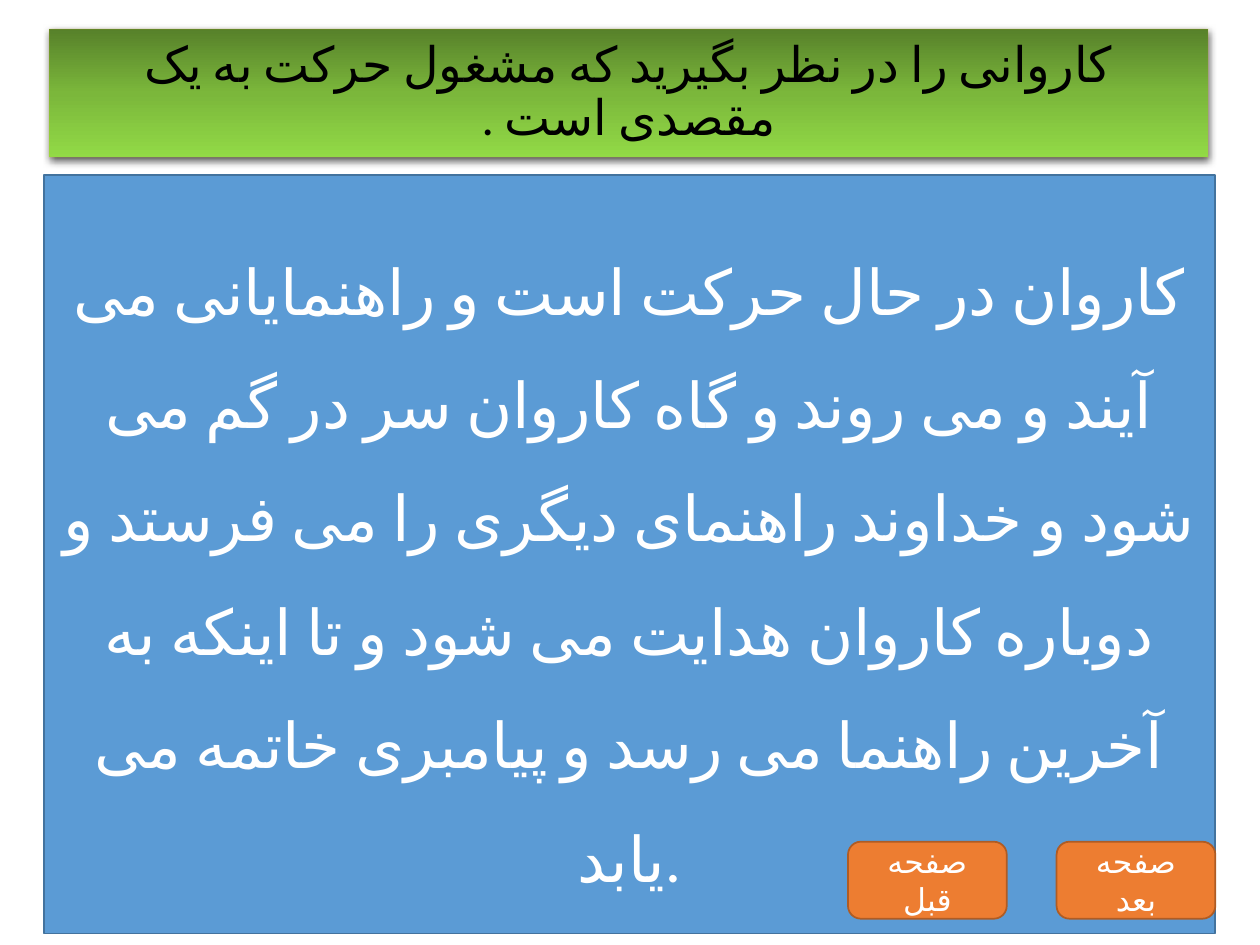
from copy import deepcopy

from lxml import etree
from pptx import Presentation
from pptx.dml.color import RGBColor
from pptx.enum.lang import MSO_LANGUAGE_ID
from pptx.enum.shapes import MSO_SHAPE
from pptx.enum.text import MSO_ANCHOR, MSO_AUTO_SIZE, PP_ALIGN
from pptx.oxml.ns import qn
from pptx.util import Pt

RECT, ROUNDED = MSO_SHAPE.RECTANGLE, MSO_SHAPE.ROUNDED_RECTANGLE
CENTER, MIDDLE = PP_ALIGN.CENTER, MSO_ANCHOR.MIDDLE
NO_FIT = MSO_AUTO_SIZE.NONE
PERSIAN = MSO_LANGUAGE_ID.FARSI

THEME = {
    "font": "Calibri",
    "title": {"size": 28, "text": "000000", "line": "FFC000", "width": 0.75,
              "stops": [(0, "57812A"), (0.5, "7BB73B"), (1, "92DA46")], "shadow": "000000"},
    "story": {"size": 36, "text": "FFFFFF", "fill": "5B9BD5", "line": "43739E", "width": 1},
    "button": {"size": 18, "text": "FFFFFF", "fill": "ED7D31", "line": "AF5C24", "width": 1},
}


def format_box(box, words, style, spacing):
    """Outline and centred text shared by every box on the slide."""
    box.shadow.inherit = False
    box.line.color.rgb = RGBColor.from_string(style["line"])
    box.line.width = Pt(style["width"])
    if "fill" in style:
        box.fill.solid()
        box.fill.fore_color.rgb = RGBColor.from_string(style["fill"])
    frame = box.text_frame
    frame.text = words
    paragraph = frame.paragraphs[0]
    run = paragraph.runs[0]
    run.font.color.rgb = RGBColor.from_string(style["text"])
    formats = [
        (frame, {"word_wrap": True, "auto_size": NO_FIT, "vertical_anchor": MIDDLE}),
        (paragraph, {"alignment": CENTER, "line_spacing": spacing}),
        (run.font, {"name": THEME["font"], "size": Pt(style["size"]), "language_id": PERSIAN}),
    ]
    for target, values in formats:
        for attribute, value in values.items():
            setattr(target, attribute, value)
    # Persian letters take the complex-script font
    etree.SubElement(run._r.get_or_add_rPr(), qn("a:cs"), typeface=THEME["font"])


prs = Presentation()
prs.slide_width, prs.slide_height = Pt(720), Pt(540)
slide = prs.slides.add_slide(prs.slide_layouts[5])

# Title bar, right to left
title = slide.shapes.title
title.left, title.top, title.width, title.height = Pt(28.1), Pt(16.6), Pt(662.4), Pt(73.4)
format_box(title, "کاروانی را در نظر بگیرید که مشغول حرکت به یک مقصدی است .",
           THEME["title"], 0.9)
title.text_frame.paragraphs[0]._p.get_or_add_pPr().set("rtl", "1")

# Three-stop vertical gradient
title.fill.gradient()
title.fill.gradient_angle = 270
properties = title._element.spPr
stop_list = properties.find(".//" + qn("a:gsLst"))
stop_list.insert(1, deepcopy(stop_list[0]))
for stop, (position, color) in zip(title.fill.gradient_stops, THEME["title"]["stops"]):
    stop.position = position
    stop.color.rgb = RGBColor.from_string(color)

# Faint outline, and a soft shadow below the title bar
line_color = properties.find(qn("a:ln")).find(".//" + qn("a:srgbClr"))
etree.SubElement(line_color, qn("a:alpha"), val="10000")
effects = properties.find(qn("a:effectLst"))
shadow = etree.SubElement(effects, qn("a:outerShdw"), blurRad=str(Pt(4.5)),
                          dist=str(Pt(1.5)), dir="5400000", algn="ctr", rotWithShape="0")
shadow_color = etree.SubElement(shadow, qn("a:srgbClr"), val=THEME["title"]["shadow"])
etree.SubElement(shadow_color, qn("a:alpha"), val="63000")

# Story of the caravan
story = slide.shapes.add_shape(RECT, Pt(25.2), Pt(100.1), Pt(669), Pt(433.4))
format_box(story, "کاروان در حال حرکت است و راهنمایانی می آیند و می روند و گاه کاروان "
                  "سر در گم می شود و خداوند راهنمای دیگری را می فرستد و دوباره کاروان "
                  "هدایت می شود و تا اینکه به آخرین راهنما می رسد و پیامبری خاتمه می یابد.",
           THEME["story"], 1.5)

# Page buttons, from the right edge leftwards
for index, label in enumerate(["صفحه بعد", "صفحه قبل"]):
    button = slide.shapes.add_shape(ROUNDED, Pt(603.8 - index * 119.2), Pt(481),
                                    Pt(90.7), Pt(44))
    format_box(button, label, THEME["button"], 1.0)

prs.save("out.pptx")
